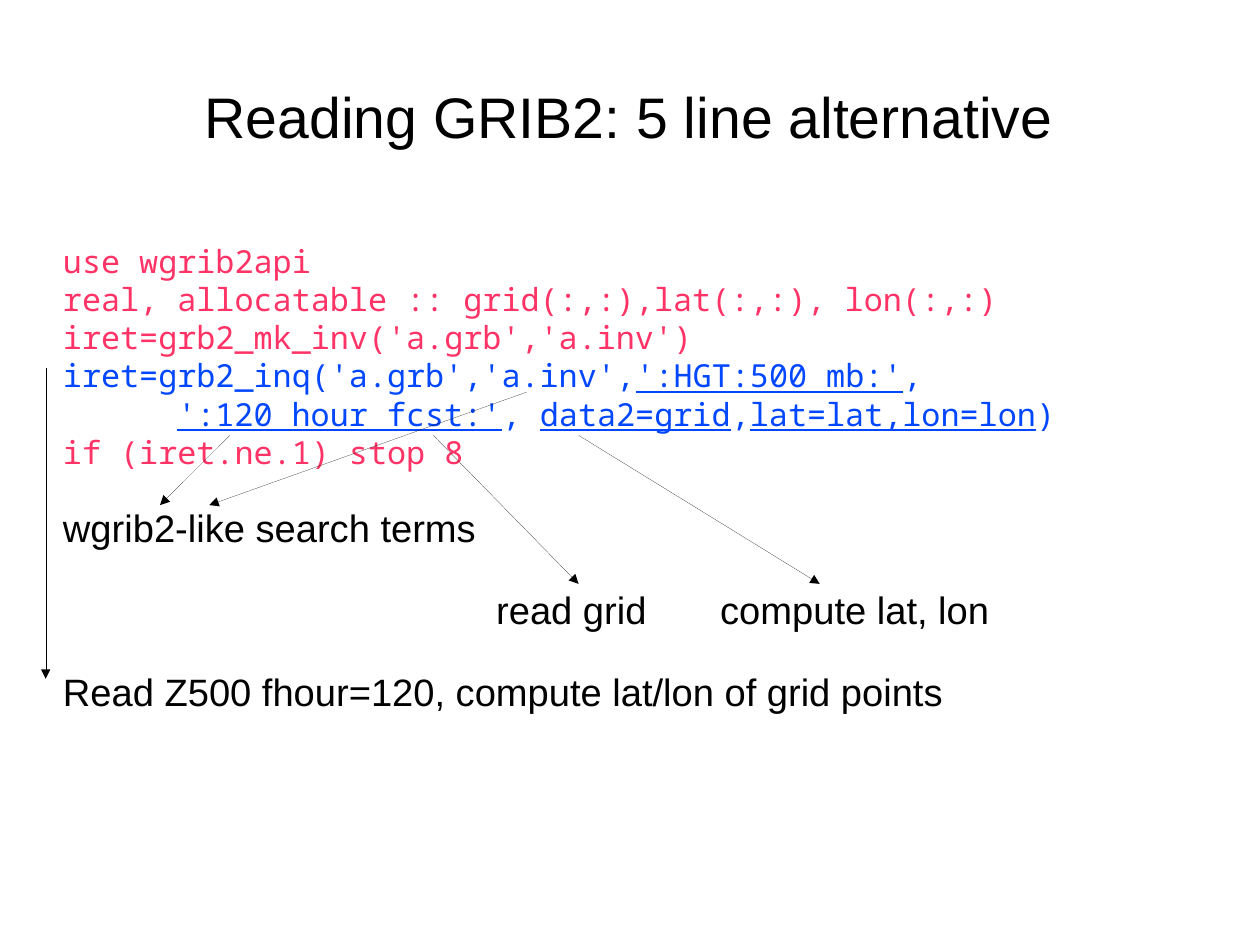
from lxml.etree import SubElement
from pptx import Presentation
from pptx.dml.color import RGBColor
from pptx.enum.shapes import MSO_CONNECTOR as CONN
from pptx.enum.text import MSO_ANCHOR as ANCHOR, PP_ALIGN as ALIGN
from pptx.oxml.ns import qn
from pptx.util import Cm, Inches, Pt

PINK, BLUE, BLACK = "FF3366", "0047FF", "000000"
LEFT, WIDTH = 5, 89.8  # text column, percent of slide width


def rgb(value):
    return RGBColor.from_string(value)


class Deck:
    """Style and current slide; lengths are percentages of the slide."""
    sans, mono = "Arial", "Noto Sans Mono"

    def __init__(self, width, height):
        self.prs = Presentation()
        self.prs.slide_width, self.prs.slide_height = width, height
        self.s = self.prs.slides.add_slide(self.prs.slide_layouts[6])

    def at(self, x, y):
        return int(self.prs.slide_width * x / 100), int(self.prs.slide_height * y / 100)

    def box(self, x, y, w, h, anchor=ANCHOR.TOP, top=0):
        tf = self.s.shapes.add_textbox(*self.at(x, y), *self.at(w, h)).text_frame
        tf.margin_left = tf.margin_right = tf.margin_bottom = 0
        tf.margin_top = self.at(0, top)[1]
        tf.word_wrap, tf.vertical_anchor = True, anchor
        return tf

    def style(self, p, font, size, color):
        p.font.name, p.font.size = font, Pt(size)
        p.font.color.rgb = rgb(color)

    def title(self, text, x, y, w, h):
        p = self.box(x, y, w, h, ANCHOR.MIDDLE).paragraphs[0]
        p.text, p.alignment = text, ALIGN.CENTER
        self.style(p, self.sans, 36, BLACK)

    def code(self, tf, lines, size, pitch):
        """Each line is (colour, indent in characters, parts); every second part is underlined."""
        for i, (color, indent, parts) in enumerate(lines):
            p = tf.add_paragraph() if i else tf.paragraphs[0]
            p.line_spacing = Pt(pitch)
            self.style(p, self.mono, size, color)
            if indent:
                p._p.get_or_add_pPr().set("marL", str(Pt(indent * size * 0.6)))
            for j, part in enumerate(parts):
                if part:
                    r = p.add_run()
                    r.text, r.font.underline = part, j % 2 == 1

    def note(self, tf, text, gap, tabs=()):
        p = tf.add_paragraph()
        p.text, p.space_before = text, Pt(gap)
        if tabs:
            tab_list = SubElement(p._p.get_or_add_pPr(), qn("a:tabLst"))
            for pos in tabs:
                SubElement(tab_list, qn("a:tab"), pos=str(Inches(pos)), algn="l")
        self.style(p, self.sans, 24, BLACK)

    def arrow(self, start, end):
        c = self.s.shapes.add_connector(CONN.STRAIGHT, *self.at(*start), *self.at(*end))
        c._element.remove(c._element.find(qn("p:style")))  # hairline
        c.line.color.rgb = rgb(BLACK)
        SubElement(c.line._get_or_add_ln(), qn("a:tailEnd"), type="triangle")
        SubElement(c._element.spPr, qn("a:effectLst"))


def main():
    deck = Deck(Cm(28), Cm(21))

    # Title
    deck.title("Reading GRIB2: 5 line alternative", LEFT, 4, WIDTH, 16.4)

    # Code listing
    body = deck.box(LEFT, 19.2, WIDTH, 66, top=6.4)
    deck.code(body, [
        (PINK, 0, ["use wgrib2api"]),
        (PINK, 0, ["real, allocatable :: grid(:,:),lat(:,:), lon(:,:)"]),
        (PINK, 0, ["iret=grb2_mk_inv('a.grb','a.inv')"]),
        (BLUE, 0, ["iret=grb2_inq('a.grb','a.inv',", "':HGT:500 mb:'", ","]),
        (BLUE, 6, ["", "':120 hour fcst:'", ", ", "data2=grid", ",",
                   "lat=lat,lon=lon", ")"]),
        (PINK, 0, ["if (iret.ne.1) stop 8"]),
    ], 20, 24)

    # Explanations below the code
    deck.note(body, "wgrib2-like search terms", 21.3)
    deck.note(body, "\tread grid\tcompute lat, lon", 22.8, tabs=(3.79, 5.75))
    deck.note(body, "Read Z500 fhour=120, compute lat/lon of grid points", 22.8)

    # Arrows from code to explanations
    for start, end in [
        ((18.24, 46.07), (12.7, 53.45)),
        ((41.83, 41.48), (16.61, 53.45)),
        ((34.39, 46.07), (45.92, 61.79)),
        ((45.92, 46.07), (65.06, 61.79)),
        ((3.63, 38.94), (3.63, 71.83)),
    ]:
        deck.arrow(start, end)

    deck.prs.save("out.pptx")


if __name__ == "__main__":
    main()
